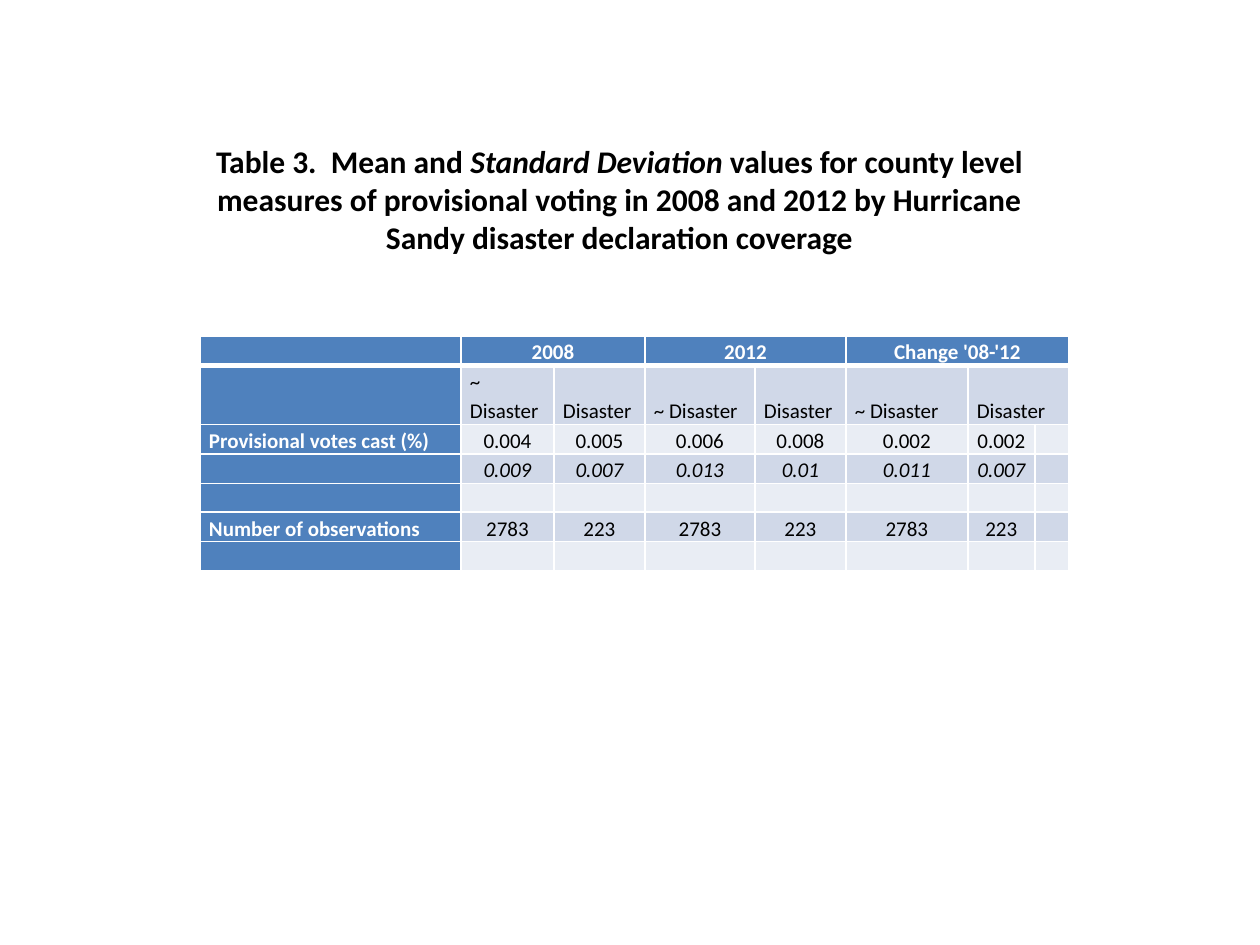
from dataclasses import dataclass

from lxml.etree import SubElement
from pptx import Presentation
from pptx.dml.color import RGBColor
from pptx.enum.text import MSO_ANCHOR, MSO_AUTO_SIZE, PP_ALIGN
from pptx.oxml.ns import qn
from pptx.util import Emu, Pt

EMU_PER_PX = 914400 / 126


@dataclass(frozen=True)
class Theme:
    font: str = "Calibri"
    title_size: int = 18
    table_size: int = 12
    text: str = "000000"
    reverse_text: str = "FFFFFF"
    border: str = "FFFFFF"
    header: str = "4F81BD"
    bands: tuple = ("E9EDF4", "D0D8E8")


THEME = Theme()

TITLE_RUNS = [
    ("Table 3.  Mean and ", False),
    ("Standard Deviation", True),
    (" values for county level measures of provisional voting in 2008 and 2012 "
     "by Hurricane Sandy disaster declaration coverage", False),
]
COLUMN_WIDTHS = [261, 93, 91, 110, 91, 122, 67, 34]
ROW_HEIGHTS = [29, 57, 29, 29, 29, 29, 29]
YEAR_ROW, GROUP_ROW, DEVIATION_ROW, OBSERVATION_ROW = 0, 1, 3, 5
ROWS = [
    ["", "2008", "", "2012", "", "Change '08-'12", "", ""],
    ["", *["~ Disaster", "Disaster"] * 3, ""],
    ["Provisional votes cast (%)", "0.004", "0.005", "0.006", "0.008", "0.002", "0.002", ""],
    ["", "0.009", "0.007", "0.013", "0.01", "0.011", "0.007", ""],
    [""] * 8,
    ["Number of observations", *["2783", "223"] * 3, ""],
    [""] * 8,
]
# (row, first column, last column)
MERGES = [(YEAR_ROW, 1, 2), (YEAR_ROW, 3, 4), (YEAR_ROW, 5, 7), (GROUP_ROW, 6, 7)]


def px(length):
    return Emu(round(length * EMU_PER_PX))


def style_font(font, size, color, bold, italic):
    font.name = THEME.font
    font.size = Pt(size)
    font.color.rgb = RGBColor.from_string(color)
    font.bold = bold
    font.italic = italic


def add_title(slide):
    title = slide.shapes.title
    title.left, title.top, title.width, title.height = map(px, (168, 136, 903, 165))
    frame = title.text_frame
    frame.word_wrap = True
    frame.auto_size = MSO_AUTO_SIZE.NONE
    frame.vertical_anchor = MSO_ANCHOR.TOP
    paragraph = frame.paragraphs[0]
    paragraph.alignment = PP_ALIGN.CENTER
    for text, italic in TITLE_RUNS:
        run = paragraph.add_run()
        run.text = text
        style_font(run.font, THEME.title_size, THEME.text, True, italic)


def set_borders(cell, row):
    """Draw white cell borders, with a thick rule below the year row."""
    widths = {"L": 1, "R": 1,
              "T": 3 if row == GROUP_ROW else 1,
              "B": 3 if row == YEAR_ROW else 1}
    properties = cell._tc.get_or_add_tcPr()
    for side, width in widths.items():
        line = SubElement(properties, qn(f"a:ln{side}"), w=str(Pt(width)))
        fill = SubElement(line, qn("a:solidFill"))
        SubElement(fill, qn("a:srgbClr"), val=THEME.border)


def format_cell(cell, row, column):
    is_header = row == YEAR_ROW or column == 0
    set_borders(cell, row)
    cell.fill.solid()
    cell.fill.fore_color.rgb = RGBColor.from_string(
        THEME.header if is_header else THEME.bands[row % 2])
    cell.margin_left = cell.margin_right = px(9)
    cell.margin_top = cell.margin_bottom = 0
    at_bottom = row <= GROUP_ROW or (row, column) == (OBSERVATION_ROW, 0)
    cell.vertical_anchor = MSO_ANCHOR.BOTTOM if at_bottom else MSO_ANCHOR.MIDDLE

    paragraph = cell.text_frame.paragraphs[0]
    paragraph.line_spacing = 1.15
    is_left = column == 0 or row == GROUP_ROW
    paragraph.alignment = PP_ALIGN.LEFT if is_left else PP_ALIGN.CENTER
    for run in paragraph.runs:
        style_font(run.font, THEME.table_size,
                   THEME.reverse_text if is_header else THEME.text,
                   is_header, row == DEVIATION_ROW)
    if not paragraph.runs:
        # An empty cell takes its line height from the end-of-paragraph size.
        SubElement(paragraph._p, qn("a:endParaRPr"), sz=str(THEME.table_size * 100))


def add_voting_table(slide):
    frame = slide.shapes.add_table(
        len(ROWS), len(COLUMN_WIDTHS), px(200), px(336),
        px(sum(COLUMN_WIDTHS)), px(sum(ROW_HEIGHTS)))
    table = frame.table
    table.horz_banding = False
    for column, width in zip(table.columns, COLUMN_WIDTHS):
        column.width = px(width)
    for row, height in zip(table.rows, ROW_HEIGHTS):
        row.height = px(height)
    for row, first, last in MERGES:
        table.cell(row, first).merge(table.cell(row, last))
    for row, texts in enumerate(ROWS):
        for column, text in enumerate(texts):
            cell = table.cell(row, column)
            if text:
                cell.text_frame.text = text
            format_cell(cell, row, column)


def main():
    presentation = Presentation()
    presentation.slide_width = px(1260)
    presentation.slide_height = px(945)
    title_only = presentation.slide_layouts[5]
    slide = presentation.slides.add_slide(title_only)
    add_voting_table(slide)
    add_title(slide)
    presentation.save("out.pptx")


if __name__ == "__main__":
    main()
